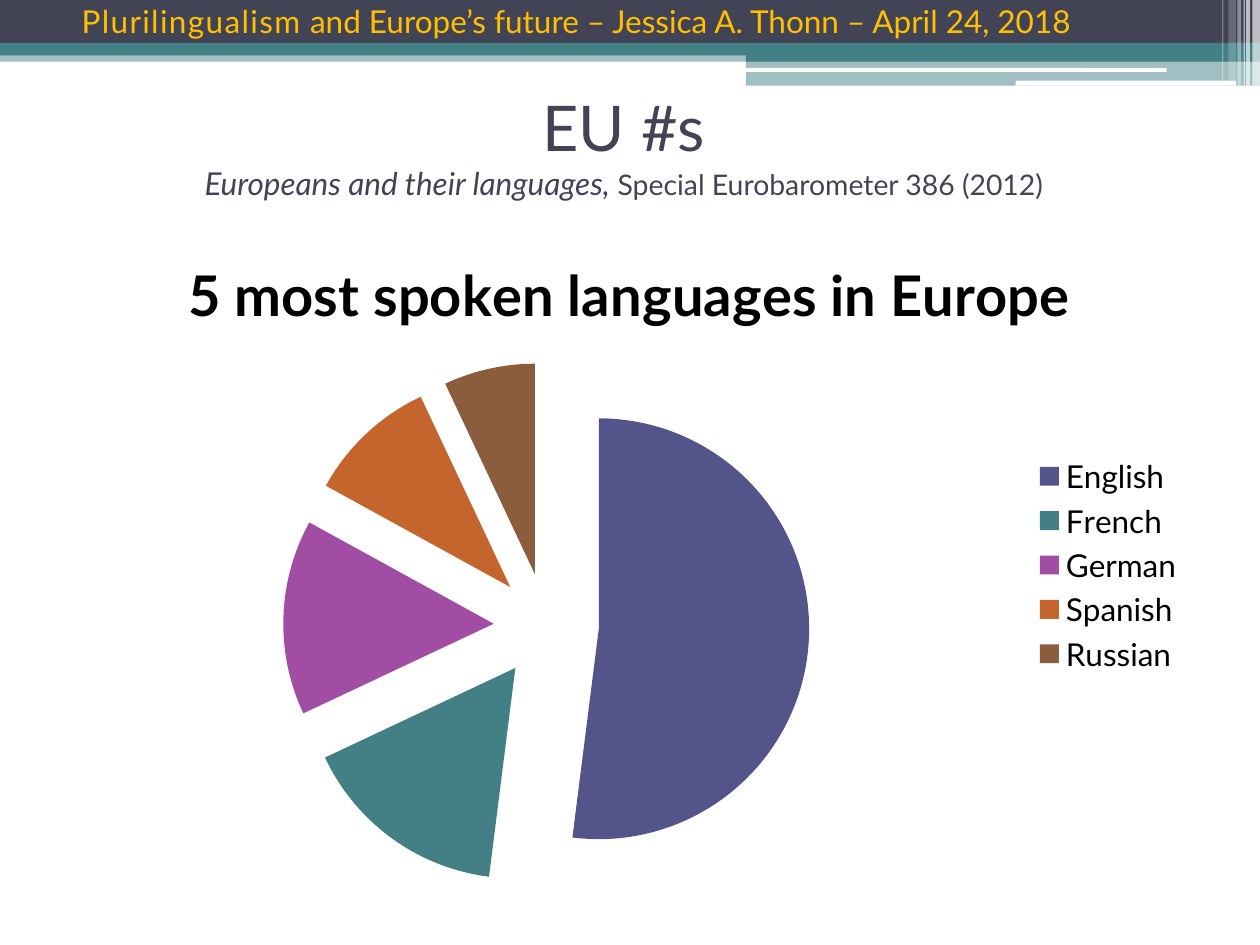
"""Build a slide with a pie chart of the most spoken languages in Europe."""
from lxml import etree
from pptx import Presentation, util as u
from pptx.chart.data import CategoryChartData
from pptx.dml.color import RGBColor
from pptx.enum import chart as ch, shapes, text
from pptx.oxml.ns import qn

FONT = "Lato"
NAVY, TEAL, WHITE, GOLD, BLACK = "424456", "438086", "FFFFFF", "FFC000", "000000"
HEADER = [("Plurilingualism", 80),
          (" and Europe’s future – Jessica A. Thonn – April 24, 2018", 0)]
HEADING = "EU #s"
SUBTITLE = [("Europeans and their languages, ", 18, True),
            ("Special Eurobarometer 386 (2012)", 16.2, False)]
CHART_TITLE = "5 most spoken languages in Europe"
LANGUAGES = [("English", 52, "53548A"), ("French", 16, TEAL), ("German", 15, "A04DA3"),
             ("Spanish", 10, "C4652D"), ("Russian", 7, "8B5D3D")]
BANDS = [(0, 0.4, 10, 0.09, TEAL, 50), (0, 0, 10, 0.34, NAVY, 100),
         (0, 0.34, 10, 0.1, TEAL, 100), (5.92, 0.39, 4.08, 0.1, TEAL, 100),
         (5.92, 0.48, 4.08, 0.2, TEAL, 50)]
PILLS = [(5.91, 0.54, 3.35, 0.03, WHITE, 100), (8.06, 0.64, 1.75, 0.04, WHITE, 100)]
STRIPES = [(left, 0, width, height, WHITE, opacity) for left, width, height, opacity in
           [(9.94, 0.06, 0.68, 65), (9.89, 0.03, 0.68, 65), (9.87, 0.01, 0.68, 60),
            (9.82, 0.03, 0.68, 40), (9.75, 0.06, 0.64, 20), (9.7, 0.01, 0.64, 30)]]


def paint(fill, color):
    fill.solid()
    fill.fore_color.rgb = RGBColor.from_string(color)


def style(font, size, color, bold=False, italic=False):
    font.name, font.size, font.bold, font.italic = FONT, u.Pt(size), bold, italic
    paint(font.fill, color)


def add_span(para, words, size, color, italic=False):
    span = para.add_run()
    span.text = words
    style(span.font, size, color, italic=italic)
    return span


def add_bar(page, kind, left, top, width, height, color, opacity):
    bar = page.shapes.add_shape(kind, *map(u.Inches, (left, top, width, height)))
    bar.shadow.inherit = False
    bar.line.fill.background()
    paint(bar.fill, color)
    if opacity < 100:
        shade = bar.fill._xPr.find(qn("a:solidFill"))[0]
        etree.SubElement(shade, qn("a:alpha"), val=str(opacity * 1000))


def add_title(page):
    title = page.shapes.title
    title.left, title.top, title.width, title.height = map(u.Inches, (0.45, 0.68, 9, 0.94))
    frame = title.text_frame
    frame.auto_size = text.MSO_AUTO_SIZE.NONE
    frame.vertical_anchor = text.MSO_ANCHOR.MIDDLE
    para = frame.paragraphs[0]
    para.alignment = text.PP_ALIGN.CENTER
    add_span(para, HEADING, 36, NAVY)
    para.add_line_break()
    for words, size, italic in SUBTITLE:
        add_span(para, words, size, NAVY, italic)


def add_pie(page):
    data = CategoryChartData()
    data.categories = [name for name, _, _ in LANGUAGES]
    data.add_series(CHART_TITLE, [share for _, share, _ in LANGUAGES])
    area = map(u.Inches, (0.5, 1.78, 9, 5.41))
    chart = page.shapes.add_chart(ch.XL_CHART_TYPE.PIE, *area, data).chart
    style(chart.font, 18, BLACK)
    chart.has_title = True
    title = chart.chart_title.text_frame.paragraphs[0].add_run()
    title.text = CHART_TITLE
    style(title.font, 32, BLACK, bold=True)
    chart.has_legend = True
    chart.legend.position = ch.XL_LEGEND_POSITION.RIGHT
    chart.legend.include_in_layout = False
    pie = chart.plots[0]
    pie.vary_by_categories = True
    series = pie.series[0]
    for index, (_, _, color) in enumerate(LANGUAGES):
        paint(series.points[index].format.fill, color)
    explosion = etree.Element(qn("c:explosion"), val="25")
    series._element.find(qn("c:dPt")).addprevious(explosion)


def add_header(page):
    box = page.shapes.add_textbox(*map(u.Inches, (0.43, -0.03, 9, 0.45)))
    box.text_frame.word_wrap = True
    para = box.text_frame.paragraphs[0]
    para.space_before = u.Pt(3)
    para._p.get_or_add_pPr().set("marL", str(u.Inches(0.12)))
    for words, spacing in HEADER:
        span = add_span(para, words, 18, GOLD)
        span.font._element.set("spc", str(spacing))


def main():
    deck = Presentation()
    deck.slide_width, deck.slide_height = u.Inches(10), u.Inches(7.5)
    page = deck.slides.add_slide(deck.slide_layouts[5])
    kinds = shapes.MSO_SHAPE
    for kind, bars in [(kinds.RECTANGLE, BANDS), (kinds.ROUNDED_RECTANGLE, PILLS),
                       (kinds.RECTANGLE, STRIPES)]:
        for bar in bars:
            add_bar(page, kind, *bar)
    add_title(page)
    add_pie(page)
    add_header(page)
    deck.save("out.pptx")


if __name__ == "__main__":
    main()
